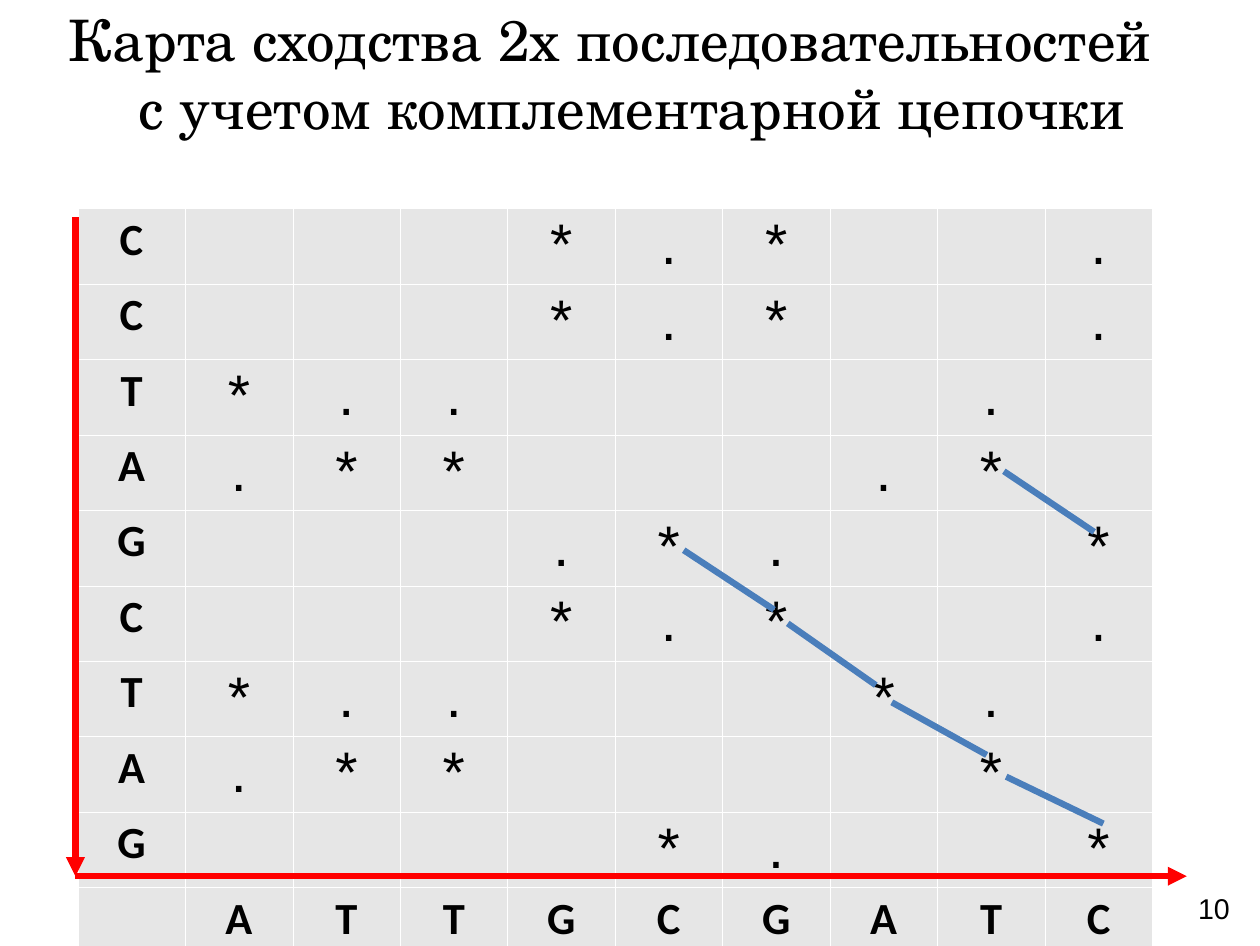
from lxml import etree
from pptx import Presentation
from pptx.dml.color import RGBColor
from pptx.enum.shapes import MSO_CONNECTOR
from pptx.enum.text import MSO_ANCHOR, PP_ALIGN
from pptx.oxml import parse_xml
from pptx.oxml.ns import nsdecls, qn
from pptx.util import Inches, Pt

BLACK = RGBColor(0x00, 0x00, 0x00)
GRAY = RGBColor(0xE6, 0xE6, 0xE6)
RED = RGBColor(0xFF, 0x00, 0x00)
BLUE = RGBColor(0x4A, 0x7E, 0xBB)

HORIZONTAL = "ATTGCGATC"
VERTICAL = "CCTAGCTAG"
COMPLEMENT = {"A": "T", "T": "A", "G": "C", "C": "G"}
UNMARKED = {(2, 6), (7, 6), (8, 3)}
ORIGIN = (0.66, 7.66)
MATCH_LINES = [
    ((8.8, 6.79), (9.65, 7.2)),
    ((7.8, 6.14), (8.63, 6.6)),
    ((8.78, 4.12), (9.57, 4.65)),
    ((6.89, 5.45), (7.66, 5.99)),
    ((5.98, 4.81), (6.77, 5.33)),
]


def match_mark(row, column):
    base, other = VERTICAL[row], HORIZONTAL[column]
    if (row, column) in UNMARKED:
        return ""
    if base == other:
        return "."
    return "*" if COMPLEMENT[base] == other else ""


class SimilarityMap:
    def __init__(self, slide):
        self.slide = slide

    def style(self, paragraph, font_name, size, bold=False, alignment=None):
        paragraph.alignment = alignment
        paragraph.font.name = font_name
        paragraph.font.size = Pt(size)
        paragraph.font.bold = bold
        paragraph.font.color.rgb = BLACK

    def text(self, lines, left, top, width, height, font_name, size, anchor=MSO_ANCHOR.TOP):
        box = self.slide.shapes.add_textbox(Inches(left), Inches(top), Inches(width), Inches(height))
        frame = box.text_frame
        frame.word_wrap = True
        frame.vertical_anchor = anchor
        for index, (line, alignment) in enumerate(lines):
            paragraph = frame.add_paragraph() if index else frame.paragraphs[0]
            paragraph.text = line
            self.style(paragraph, font_name, size, alignment=alignment)

    def cell(self, cell, text, header):
        cell.fill.solid()
        cell.fill.fore_color.rgb = GRAY
        cell.margin_top = cell.margin_bottom = Inches(0.04)
        properties = cell._tc.get_or_add_tcPr()
        for index, side in enumerate(("lnL", "lnR", "lnT", "lnB")):
            properties.insert(index, parse_xml(
                f'<a:{side} {nsdecls("a")} w="{Pt(0.06)}"><a:solidFill>'
                f'<a:srgbClr val="FFFFFF"/></a:solidFill></a:{side}>'))
        if text:
            cell.text = text
            font_name, size = ("Calibri", 28) if header else ("Arial", 36)
            self.style(cell.text_frame.paragraphs[0], font_name, size, header, PP_ALIGN.CENTER)

    def table(self, rows, left, top, column_width, row_height, last_height):
        count = len(rows[0])
        height = row_height * (len(rows) - 1) + last_height
        table = self.slide.shapes.add_table(
            len(rows), count, Inches(left), Inches(top),
            Inches(column_width * count), Inches(height)).table
        table.first_row = table.horz_banding = False
        for column in table.columns:
            column.width = Inches(column_width)
        last = len(rows) - 1
        for row, values in enumerate(rows):
            table.rows[row].height = Inches(last_height if row == last else row_height)
            for column, value in enumerate(values):
                self.cell(table.cell(row, column), value, column == 0 or row == last)

    def line(self, start, end, color, arrow=False):
        connector = self.slide.shapes.add_connector(
            MSO_CONNECTOR.STRAIGHT, *(Inches(value) for value in (*start, *end)))
        connector.line.color.rgb = color
        connector.line.width = Pt(4)
        if arrow:
            outline = connector.line._get_or_add_ln()
            etree.SubElement(outline, qn("a:tailEnd"), type="triangle")
        etree.SubElement(connector._element.spPr, qn("a:effectLst"))


def main():
    presentation = Presentation()
    presentation.slide_width = Inches(11.02)
    presentation.slide_height = Inches(8.27)
    similarity_map = SimilarityMap(presentation.slides.add_slide(presentation.slide_layouts[6]))

    rows = [[base] + [match_mark(row, column) for column in range(len(HORIZONTAL))]
            for row, base in enumerate(VERTICAL)]
    rows.append(["", *HORIZONTAL])
    similarity_map.table(rows, 0.68, 1.82, 0.94, 0.66, 0.49)

    title = [("Карта сходства 2х последовательностей", PP_ALIGN.LEFT),
             ("с учетом комплементарной цепочки", PP_ALIGN.CENTER)]
    similarity_map.text(title, 0.5, 0.15, 10.05, 0.97, "TeX Gyre Schola", 36, MSO_ANCHOR.MIDDLE)

    similarity_map.line(ORIGIN, (10.38, 7.66), RED, arrow=True)
    similarity_map.line((0.66, 1.9), ORIGIN, RED, arrow=True)
    for start, end in MATCH_LINES:
        similarity_map.line(start, end, BLUE)

    similarity_map.text([("10", PP_ALIGN.LEFT)], 10.38, 7.74, 0.6, 0.47, "Arial", 18)
    presentation.save("out.pptx")


if __name__ == "__main__":
    main()
